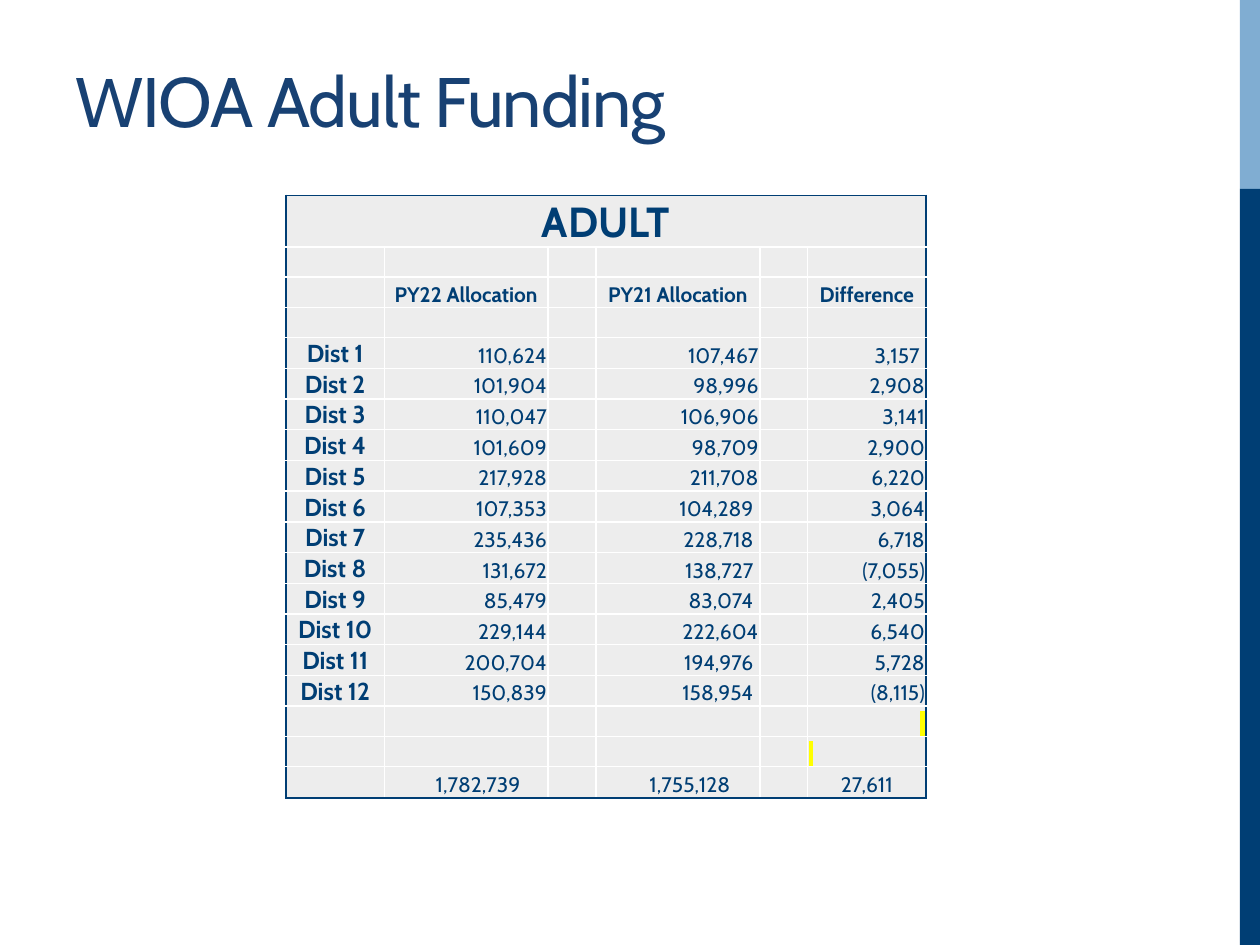
from lxml import etree
from pptx import Presentation, util as u
from pptx.dml.color import RGBColor
from pptx.enum import shapes, text
from pptx.oxml.ns import qn

FONT = "Cabin"
HUES = {"navy": "003E74", "sky": "80ADD2", "title": "184173",
        "cell": "EDEDED", "grid": "FFFFFF", "mark": "FFFF00"}
LEFT, MID, RIGHT = text.PP_ALIGN.LEFT, text.PP_ALIGN.CENTER, text.PP_ALIGN.RIGHT


def style(para, size, hue, bold=False):
    font = para.font
    font.name, font.size, font.bold = FONT, u.Pt(size), bold
    font.color.rgb = RGBColor.from_string(HUES[hue])


def edge(cell, hues):
    """Draw the left, right, top and bottom borders of a cell."""
    props = cell._tc.get_or_add_tcPr()
    for side, hue in zip("LRTB", hues):
        line = etree.SubElement(props, qn("a:ln" + side), w=str(u.Pt(1)))
        fill = etree.SubElement(line, qn("a:solidFill"))
        etree.SubElement(fill, qn("a:srgbClr"), val=HUES[hue])


deck = Presentation()
deck.slide_width, deck.slide_height = u.Inches(10), u.Inches(7.5)
slide = deck.slides.add_slide(deck.slide_layouts[6])

# Side bar
for top, height, hue in [(0, 1.5, "sky"), (1.5, 6, "navy")]:
    bar = slide.shapes.add_shape(
        shapes.MSO_SHAPE.RECTANGLE, u.Inches(9.84), u.Inches(top),
        u.Inches(0.16), u.Inches(height))
    bar.shadow.inherit = False
    bar.fill.solid()
    bar.fill.fore_color.rgb = RGBColor.from_string(HUES[hue])
    bar.line.fill.background()

# Title
box = slide.shapes.add_textbox(
    u.Inches(0.5), u.Inches(0.17), u.Inches(8.33), u.Inches(1))
frame = box.text_frame
frame.word_wrap = True
frame.vertical_anchor = text.MSO_ANCHOR.BOTTOM
para = frame.paragraphs[0]
run = para.add_run()
run.text = "WIOA Adult Funding"
run.font._element.set("spc", "-60")
style(para, 40, "title")

# Funding table; columns 2 and 4 are spacers
funds = [
    ("110,624", "107,467", "3,157"), ("101,904", "98,996", "2,908"),
    ("110,047", "106,906", "3,141"), ("101,609", "98,709", "2,900"),
    ("217,928", "211,708", "6,220"), ("107,353", "104,289", "3,064"),
    ("235,436", "228,718", "6,718"), ("131,672", "138,727", "(7,055)"),
    ("85,479", "83,074", "2,405"), ("229,144", "222,604", "6,540"),
    ("200,704", "194,976", "5,728"), ("150,839", "158,954", "(8,115)"),
]
blank = ("", "", "", "")
rows = [("ADULT", "", "", ""), blank,
        ("", "PY22 Allocation", "PY21 Allocation", "Difference"), blank]
rows += [(f"Dist {n}", *vals) for n, vals in enumerate(funds, 1)]
rows += [blank, blank, ("", "1,782,739", "1,755,128", "27,611")]
last = len(rows) - 1
first = 4
inset = {(4, 5), (9, 3), (10, 3), (11, 3), (12, 3), (14, 3), (15, 3)}
marks = {(16, 5): RIGHT, (17, 5): LEFT}

wide = [0.78, 1.3, 0.38, 1.3, 0.38, 0.94]
high = [0.35] + [0.24] * (last - 1) + [0.25]
table = slide.shapes.add_table(
    len(rows), len(wide), u.Inches(2.27), u.Inches(1.55),
    u.Inches(sum(wide)), u.Inches(sum(high))).table
table.first_row = table.horz_banding = False
for col, width in zip(table.columns, wide):
    col.width = u.Inches(width)
for row, height in zip(table.rows, high):
    row.height = u.Inches(height)

for r, (name, new, old, diff) in enumerate(rows):
    for c, word in enumerate((name, new, "", old, "", diff)):
        cell = table.cell(r, c)
        outer = (c == 0, c == 5 or r == 0, r == 0, r == last)
        edge(cell, ["navy" if out else "grid" for out in outer])
        cell.fill.solid()
        cell.fill.fore_color.rgb = RGBColor.from_string(HUES["cell"])
        cell.vertical_anchor = text.MSO_ANCHOR.BOTTOM
        cell.margin_left = cell.margin_right = cell.margin_top = u.Inches(0.01)
        cell.margin_bottom = 0
        if (r, c) in inset:
            cell.margin_right = u.Inches(0.05)
        if r == last and c in (1, 3):
            cell.margin_left = u.Inches(0.2)

        para = cell.text_frame.paragraphs[0]
        body = first <= r < first + len(funds)
        para.alignment = marks.get((r, c), RIGHT if body and c else MID)
        size = 24 if r == 0 else 14 if body and c == 0 else 12
        style(para, size, "navy", r < first or (body and c == 0))
        if word:
            para.add_run().text = word
        elif (r, c) in marks:
            run = para.add_run()
            run.text = " "
            glow = etree.SubElement(run.font._element, qn("a:highlight"))
            etree.SubElement(glow, qn("a:srgbClr"), val=HUES["mark"])
        else:
            etree.SubElement(para._p, qn("a:endParaRPr"), sz="1200")

table.cell(0, 0).merge(table.cell(0, 5))
deck.save("out.pptx")
